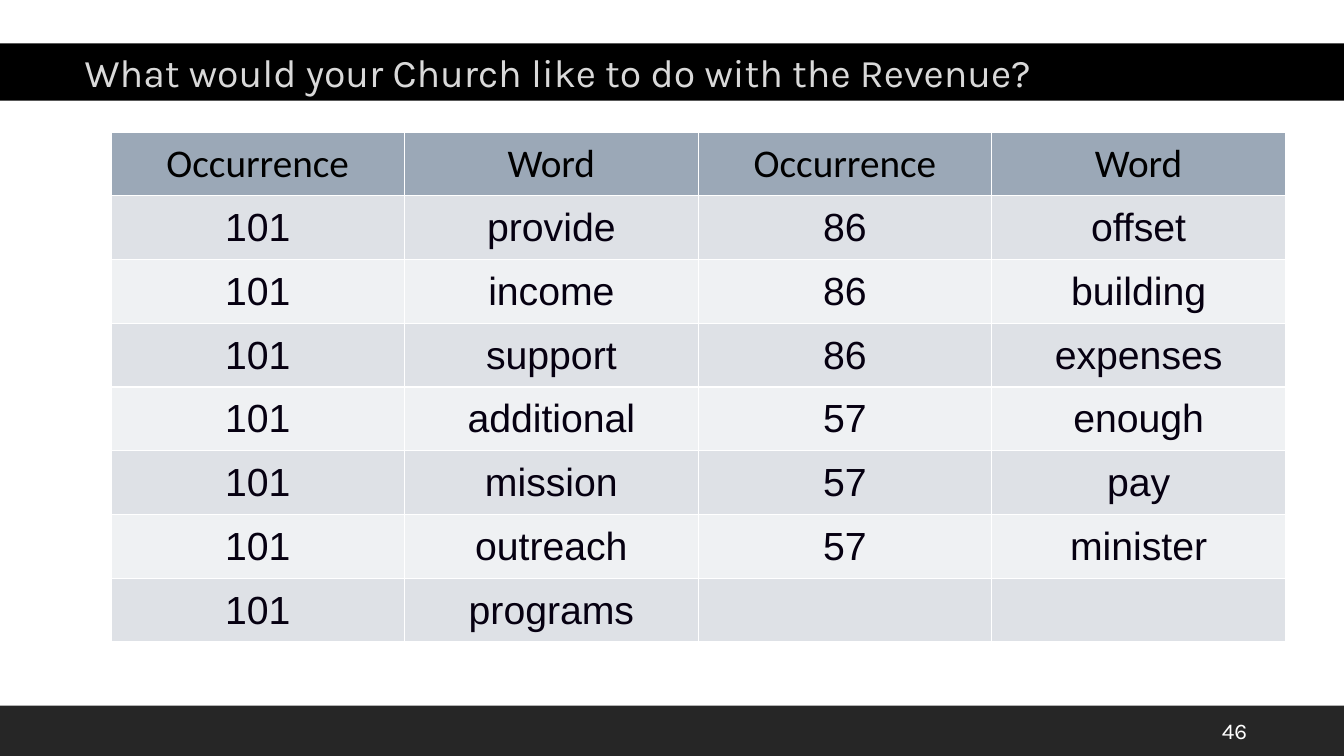
from lxml import etree
from pptx import Presentation
from pptx.dml.color import RGBColor
from pptx.enum import shapes, text
from pptx.oxml import ns
from pptx.util import Inches, Pt

HEADER = ["Occurrence", "Word", "Occurrence", "Word"]
WORD_COUNTS = [
    ["101", "provide", "86", "offset"],
    ["101", "income", "86", "building"],
    ["101", "support", "86", "expenses"],
    ["101", "additional", "57", "enough"],
    ["101", "mission", "57", "pay"],
    ["101", "outreach", "57", "minister"],
    ["101", "programs", "", ""],
]


def color(hex_string):
    return RGBColor.from_string(hex_string)


def write(text_frame, content, font_name, size, hex_string):
    text_frame.text = content
    for run in text_frame.paragraphs[0].runs:
        run.font.name = font_name
        run.font.size = Pt(size)
        run.font.color.rgb = color(hex_string)


def add_band(slide, left, top, width, height, fill):
    band = slide.shapes.add_shape(
        shapes.MSO_SHAPE.RECTANGLE,
        Inches(left), Inches(top), Inches(width), Inches(height))
    band.shadow.inherit = False
    band.fill.solid()
    band.fill.fore_color.rgb = color(fill)
    band.line.fill.background()
    return band


def add_title(slide, left, top, width, height):
    frame = add_band(slide, left, top, width, height, "000000").text_frame
    frame.margin_left = Inches(0.84)
    frame.vertical_anchor = text.MSO_ANCHOR.TOP
    write(frame, "What would your Church like to do with the Revenue?",
          "Karla", 28, "D9D9D9")
    frame.paragraphs[0].alignment = text.PP_ALIGN.LEFT


def add_footer(slide, left, top, width, height):
    add_band(slide, left, top, width, height, "262626")
    number = slide.shapes.add_textbox(
        Inches(left + width - 1.31), Inches(top + 0.05),
        Inches(0.85), Inches(0.4))
    number.text_frame.word_wrap = True
    number.text_frame.vertical_anchor = text.MSO_ANCHOR.MIDDLE
    write(number.text_frame, "46", "Karla", 16, "FFFFFF")


def set_borders(cell, hex_string, width):
    properties = cell._tc.get_or_add_tcPr()
    for index, side in enumerate(("lnL", "lnR", "lnT", "lnB")):
        line = etree.Element(ns.qn("a:" + side), w=str(Pt(width)))
        fill = etree.SubElement(line, ns.qn("a:solidFill"))
        etree.SubElement(fill, ns.qn("a:srgbClr"), val=hex_string)
        properties.insert(index, line)


def add_word_table(slide, left, top, width, height):
    rows = [HEADER] + WORD_COUNTS
    table = slide.shapes.add_table(
        len(rows), len(HEADER),
        Inches(left), Inches(top), Inches(width), Inches(height)).table
    for row_index, row in enumerate(rows):
        if row_index == 0:
            fill, font_name, ink = "9BA8B7", "Calibri", "000000"
        else:
            fill = "DEE1E6" if row_index % 2 else "EFF1F3"
            font_name, ink = "Arial", "060011"
        for column_index, content in enumerate(row):
            cell = table.cell(row_index, column_index)
            cell.fill.solid()
            cell.fill.fore_color.rgb = color(fill)
            cell.margin_left = cell.margin_right = Inches(0.01)
            cell.margin_top, cell.margin_bottom = Inches(0.01), 0
            cell.vertical_anchor = text.MSO_ANCHOR.MIDDLE
            set_borders(cell, "FFFFFF", 1)
            if content:
                write(cell.text_frame, content, font_name, 28, ink)
                paragraph = cell.text_frame.paragraphs[0]
                paragraph.alignment = text.PP_ALIGN.CENTER
                paragraph.runs[0].font.bold = False


def main():
    presentation = Presentation()
    presentation.slide_width = Inches(13.33)
    presentation.slide_height = Inches(7.5)
    slide = presentation.slides.add_slide(presentation.slide_layouts[6])

    # Footer bar with the page number
    add_footer(slide, 0, 7, 13.33, 0.5)
    # Title band
    add_title(slide, 0, 0.43, 13.33, 0.57)
    # Word counts
    add_word_table(slide, 1.1, 1.31, 11.65, 5.06)

    presentation.save("out.pptx")


if __name__ == "__main__":
    main()
